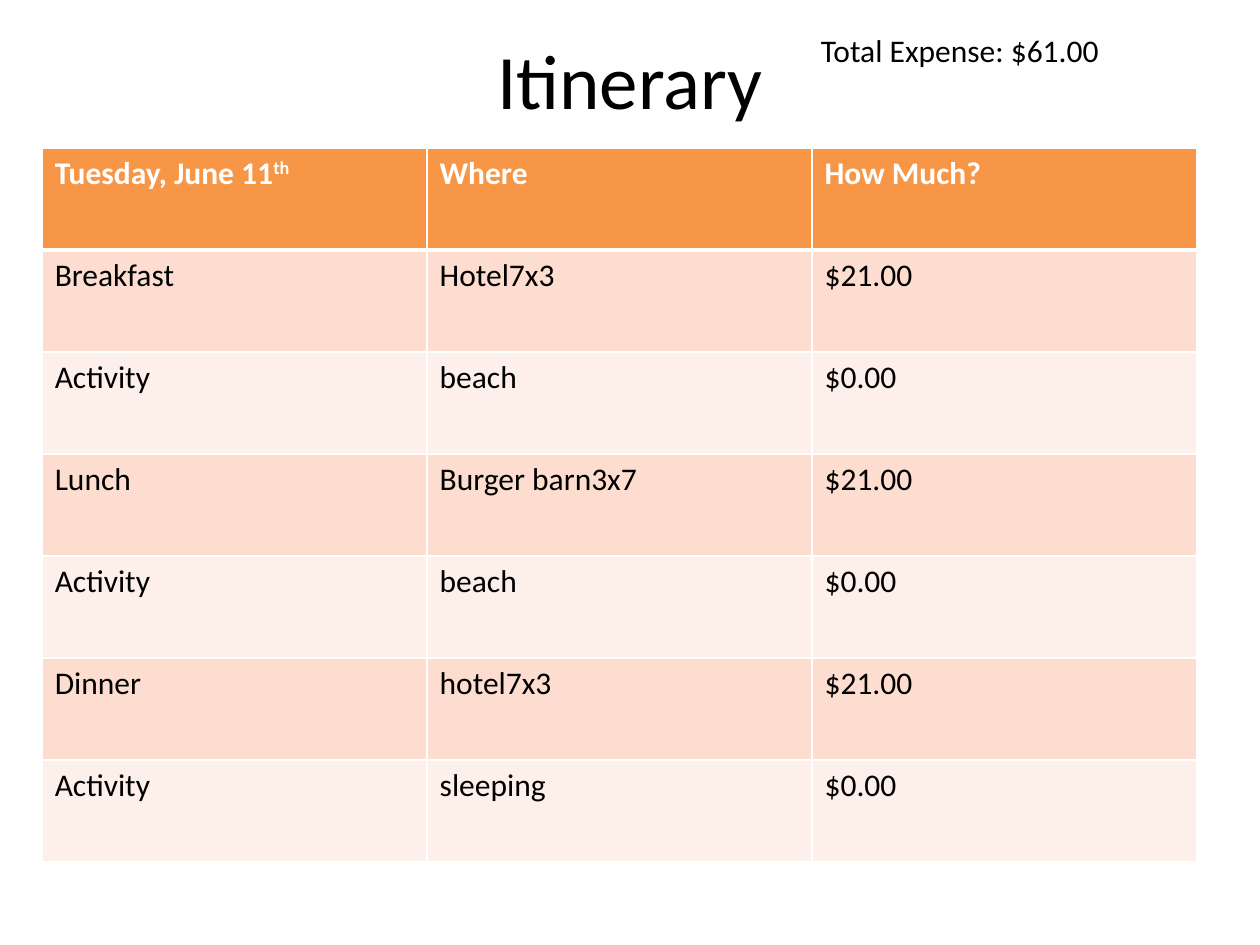
from lxml import etree
from pptx import Presentation
from pptx.dml.color import RGBColor
from pptx.enum.text import MSO_ANCHOR, PP_ALIGN
from pptx.oxml.ns import qn
from pptx.util import Cm, Pt

LEFT, CENTER = PP_ALIGN.LEFT, PP_ALIGN.CENTER
TOP, MIDDLE = MSO_ANCHOR.TOP, MSO_ANCHOR.MIDDLE
FONT = "Calibri"
COLORS = {
    "ink": "000000",
    "white": "FFFFFF",
    "head": "F79646",
    "odd": "FCDDCF",
    "even": "FDEFE9",
}
HEAD = ["Tuesday, June 11", "Where", "How Much?"]
PLANS = [
    ["Breakfast", "Hotel7x3", "$21.00"],
    ["Activity", "beach", "$0.00"],
    ["Lunch", "Burger barn3x7", "$21.00"],
    ["Activity", "beach", "$0.00"],
    ["Dinner", "hotel7x3", "$21.00"],
    ["Activity", "sleeping", "$0.00"],
]


def style(run, size=18, color="ink", bold=False):
    font = run.font
    font.name, font.size, font.bold = FONT, Pt(size), bold
    font.color.rgb = RGBColor.from_string(COLORS[color])


def add_text(slide, box, text, size, align=LEFT, anchor=TOP):
    frame = slide.shapes.add_textbox(*map(Cm, box)).text_frame
    frame.word_wrap = True
    frame.vertical_anchor = anchor
    frame.text = text
    frame.paragraphs[0].alignment = align
    style(frame.paragraphs[0].runs[0], size)


def add_edge(cell, side, width):
    props = cell._tc.get_or_add_tcPr()
    line = etree.SubElement(props, qn(f"a:ln{side}"), w=str(Pt(width)))
    fill = etree.SubElement(line, qn("a:solidFill"))
    etree.SubElement(fill, qn("a:srgbClr"), val=COLORS["white"])


def add_plan(slide, box):
    rows = [HEAD] + PLANS
    table = slide.shapes.add_table(len(rows), len(HEAD), *map(Cm, box)).table
    for col in table.columns:
        col.width = Cm(box[2] / len(HEAD))
    for r, row in enumerate(rows):
        table.rows[r].height = Cm(box[3] / len(rows))
        shade = "head" if r == 0 else "odd" if r % 2 else "even"
        for c, text in enumerate(row):
            cell = table.cell(r, c)
            # Borders come before the fill; the rule under the header is thick
            for side in "LRTB":
                thick = (r, side) in [(0, "B"), (1, "T")]
                add_edge(cell, side, 3 if thick else 1)
            cell.fill.solid()
            cell.fill.fore_color.rgb = RGBColor.from_string(COLORS[shade])
            cell.text = text
            para = cell.text_frame.paragraphs[0]
            if (r, c) == (0, 0):
                # Raised ordinal of the date
                para.add_run().text = "th"
                para.runs[1].font._element.set("baseline", "30000")
            for run in para.runs:
                style(run, color="ink" if r else "white", bold=r == 0)


def main():
    deck = Presentation()
    deck.slide_width, deck.slide_height = Cm(25.4), Cm(19.05)
    slide = deck.slides.add_slide(deck.slide_layouts[6])
    # Title and total
    add_text(slide, (1.27, 0, 22.86, 3.18), "Itinerary", 44, CENTER, MIDDLE)
    add_text(slide, (16.3, 0.5, 7.83, 1.03), "Total Expense: $61.00", 18)
    # Day plan
    add_plan(slide, (0.85, 2.98, 23.28, 14.4))
    deck.save("out.pptx")


if __name__ == "__main__":
    main()
